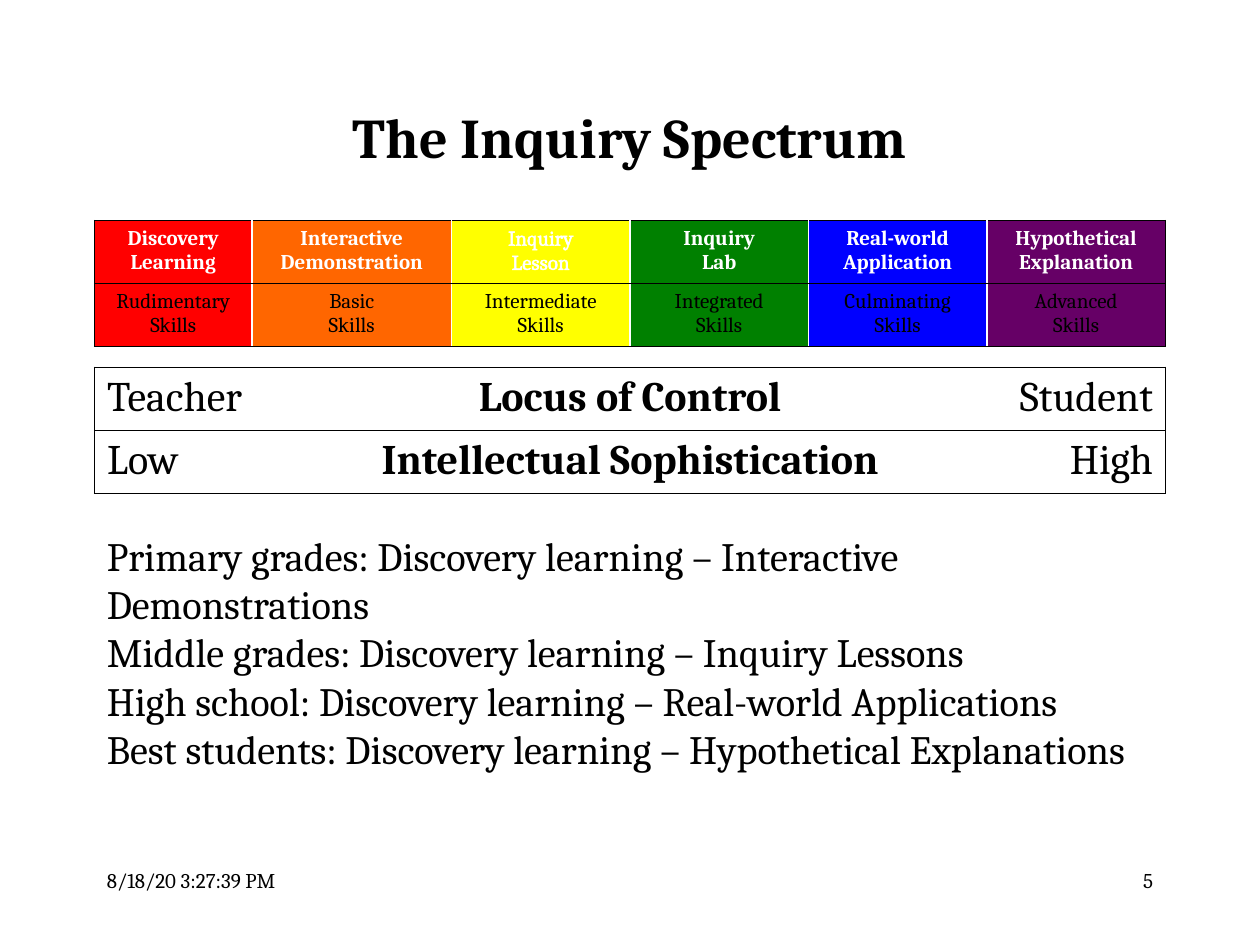
from lxml import etree
from pptx import Presentation
from pptx import util as u
from pptx.dml.color import RGBColor
from pptx.enum import text
from pptx.oxml.ns import qn

BLACK, WHITE = "000000", "FFFFFF"
LEFT, CENTER, RIGHT = text.PP_ALIGN.LEFT, text.PP_ALIGN.CENTER, text.PP_ALIGN.RIGHT


def rgb(value):
    """Turn a hex string into a colour."""
    return RGBColor.from_string(value)


def line_xml(tag, color, points):
    """Build a line element, empty when no colour is given."""
    line = etree.Element(qn(tag), w=str(u.Pt(points)))
    if color:
        solid = etree.SubElement(line, qn("a:solidFill"))
        etree.SubElement(solid, qn("a:srgbClr"), val=color)
    else:
        etree.SubElement(line, qn("a:noFill"))
    return line


def write(frame, content, size=12, color=BLACK, bold=False, align=LEFT, outline=None):
    """Write each line of the content as a formatted paragraph."""
    for index, words in enumerate(content.split("\n")):
        paragraph = frame.paragraphs[0] if index == 0 else frame.add_paragraph()
        paragraph.alignment = align
        run = paragraph.add_run()
        run.text = words
        run.font.name, run.font.size, run.font.bold = "Cambria", u.Pt(size), bold
        run.font.color.rgb = rgb(color)
        if outline:
            run.font._element.insert(0, line_xml("a:ln", color, outline))


class SpectrumSlide:
    """Hold the grid, the deck and the current slide."""

    COLUMNS, ROWS = 120, 90

    def __init__(self):
        """Open a deck with one blank slide."""
        self.deck = Presentation()
        self.deck.slide_width, self.deck.slide_height = u.Inches(10), u.Inches(7.5)
        self.slide = self.deck.slides.add_slide(self.deck.slide_layouts[6])

    def across(self, columns):
        """Convert grid columns to a length."""
        return round(self.deck.slide_width * columns / self.COLUMNS)

    def down(self, rows):
        """Convert grid rows to a length."""
        return round(self.deck.slide_height * rows / self.ROWS)

    def place(self, left, top, width, height):
        """Convert a grid position and size to lengths."""
        return self.across(left), self.down(top), self.across(width), self.down(height)

    def label(self, content, *area, anchor=text.MSO_ANCHOR.TOP, **style):
        """Add a wrapping text box."""
        frame = self.slide.shapes.add_textbox(*self.place(*area)).text_frame
        frame.word_wrap, frame.vertical_anchor = True, anchor
        write(frame, content, **style)

    def grid(self, left, top, widths, heights, divider=None):
        """Add a table with black rules and the given inner divider."""
        area = self.place(left, top, sum(widths), sum(heights))
        table = self.slide.shapes.add_table(len(heights), len(widths), *area).table
        table.first_row = table.horz_banding = False
        for column, width in zip(table.columns, widths):
            column.width = self.across(width)
        for row, height in zip(table.rows, heights):
            row.height = self.down(height)
            for index, cell in enumerate(row.cells):
                edges = {"a:lnL": BLACK if index == 0 else divider,
                         "a:lnR": BLACK if index == len(widths) - 1 else divider,
                         "a:lnT": BLACK, "a:lnB": BLACK}
                properties = cell._tc.get_or_add_tcPr()
                for tag, color in edges.items():
                    properties.append(line_xml(tag, color, 1))
        return table

    def fill(self, cell, color, opacity=100):
        """Fill a table cell."""
        cell.fill.solid()
        cell.fill.fore_color.rgb = rgb(color)
        if opacity < 100:
            tint = cell._tc.tcPr.find(".//" + qn("a:srgbClr"))
            etree.SubElement(tint, qn("a:alpha"), val=str(opacity * 1000))

    def spectrum(self, stages, *area):
        """Add the coloured stages above their skills."""
        table = self.grid(*area, divider=WHITE)
        for column, (stage, skills, color) in enumerate(stages):
            heading, detail = table.cell(0, column), table.cell(1, column)
            self.fill(heading, color)
            self.fill(detail, color, opacity=50)
            outlined = color == "FFFF00"
            write(heading.text_frame, stage, color=WHITE, bold=not outlined,
                  align=CENTER, outline=1.45 if outlined else None)
            write(detail.text_frame, skills, align=CENTER)

    def scales(self, rows, *area):
        """Add the scales that run from one extreme to the other."""
        table = self.grid(*area)
        for row, words in enumerate(rows):
            for column, align in enumerate((LEFT, CENTER, RIGHT)):
                cell = table.cell(row, column)
                self.fill(cell, WHITE)
                write(cell.text_frame, words[column], size=24,
                      bold=align == CENTER, align=align)


STAGES = [
    ("Discovery Learning", "Rudimentary Skills", "FF0000"),
    ("Interactive Demonstration", "Basic\nSkills", "FF6600"),
    ("Inquiry\nLesson", "Intermediate\nSkills", "FFFF00"),
    ("Inquiry\nLab", "Integrated\nSkills", "008000"),
    ("Real-world\nApplication", "Culminating\nSkills", "0000FF"),
    ("Hypothetical Explanation", "Advanced\nSkills", "660066"),
]
SCALES = [
    ("Teacher", "Locus of Control", "Student"),
    ("Low", "Intellectual Sophistication", "High"),
]
GRADES = """Primary grades: Discovery learning – Interactive Demonstrations
Middle grades: Discovery learning – Inquiry Lessons
High school: Discovery learning – Real-world Applications
Best students: Discovery learning – Hypothetical Explanations"""


def main():
    """Build and save the slide."""
    page = SpectrumSlide()
    page.label("The Inquiry Spectrum", 9, 8, 102, 10, size=32, bold=True,
               align=CENTER, anchor=text.MSO_ANCHOR.MIDDLE)
    row_heights = [5.8] * 2
    page.scales(SCALES, 9, 35, [24, 54, 24], row_heights)
    page.label("8/18/20 3:27:39 PM", 9, 82, 25, 6)
    page.label("5", 86, 82, 25, 6, align=RIGHT)
    page.spectrum(STAGES, 9, 21, [15, 19] + [17] * 4, row_heights)
    page.label(GRADES, 9, 50, 103, 20, size=23)
    page.deck.save("out.pptx")


if __name__ == "__main__":
    main()
